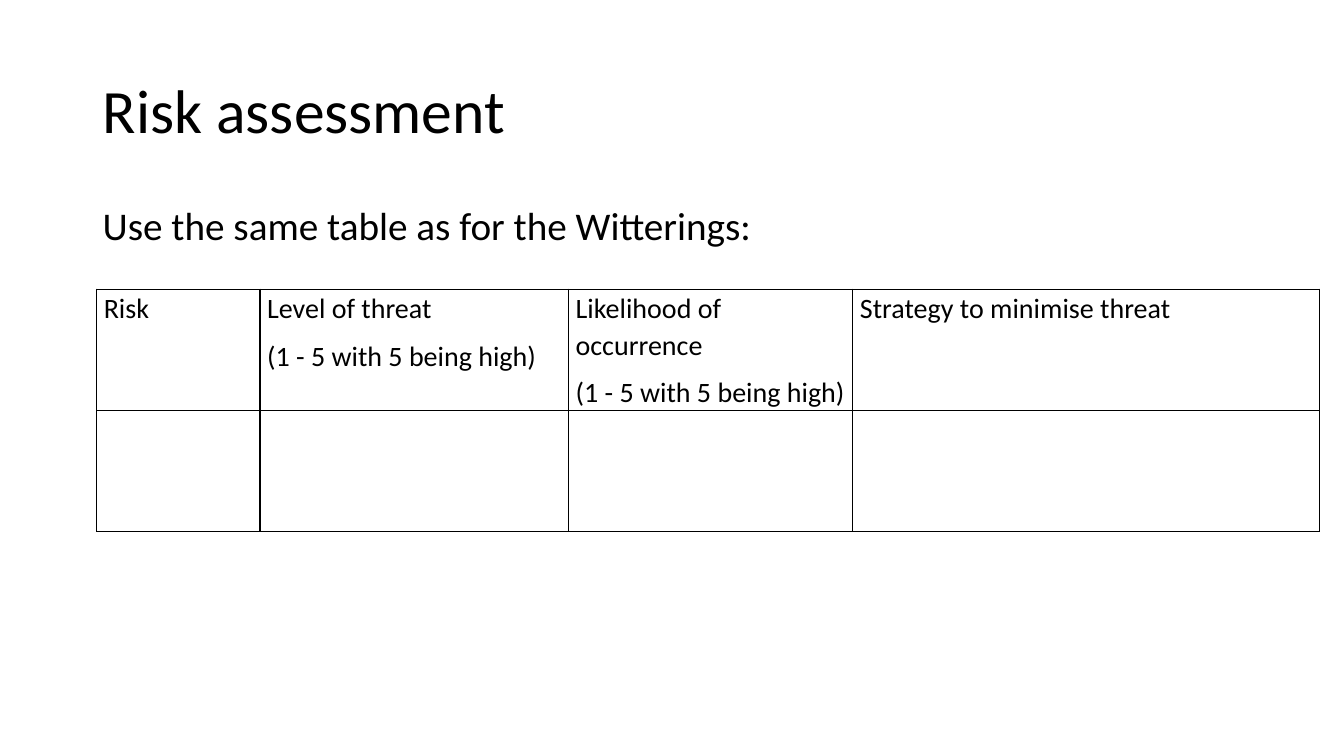
from lxml.etree import SubElement
from pptx import Presentation
from pptx.dml.color import RGBColor
from pptx.enum.text import MSO_ANCHOR, PP_ALIGN
from pptx.oxml.ns import qn
from pptx.util import Inches, Pt

COLORS = {"ink": "000000", "paper": "FFFFFF"}
FONT = "Calibri"
SCALE = "(1 - 5 with 5 being high)"
HEADINGS = [
    ["Risk"],
    ["Level of threat", SCALE],
    ["Likelihood of occurrence", SCALE],
    ["Strategy to minimise threat"],
]
COLUMN_WIDTHS = [1.62, 3.06, 2.82, 4.63]
ROW_HEIGHT = 1.2
ROW_COUNT = 2
LEFT, TEXT_WIDTH = 0.92, 11.5


def write_paragraphs(frame, lines, size, line_spacing, before=0, after=0):
    frame.word_wrap = True
    for index, line in enumerate(lines):
        paragraph = frame.paragraphs[0] if index == 0 else frame.add_paragraph()
        paragraph.alignment = PP_ALIGN.LEFT
        paragraph.line_spacing = line_spacing
        paragraph.space_before = Pt(before)
        paragraph.space_after = Pt(after)
        run = paragraph.add_run()
        run.text = line
        run.font.size = Pt(size)
        run.font.name = FONT
        run.font.color.rgb = RGBColor.from_string(COLORS["ink"])


def place_title(slide, text):
    title = slide.shapes.title
    title.left, title.top = Inches(LEFT), Inches(0.4)
    title.width, title.height = Inches(TEXT_WIDTH), Inches(1.45)
    title.text_frame.vertical_anchor = MSO_ANCHOR.MIDDLE
    write_paragraphs(title.text_frame, [text], 44, 0.9)


def add_instruction(slide, text):
    box = slide.shapes.add_textbox(
        Inches(LEFT), Inches(2), Inches(TEXT_WIDTH), Inches(4.76))
    write_paragraphs(box.text_frame, [text], 28, 0.9, before=10)


def draw_borders(cell):
    properties = cell._tc.get_or_add_tcPr()
    for index, side in enumerate(("a:lnL", "a:lnR", "a:lnT", "a:lnB")):
        line = SubElement(properties, qn(side), w=str(Pt(1)))
        fill = SubElement(line, qn("a:solidFill"))
        SubElement(fill, qn("a:srgbClr"), val=COLORS["ink"])
        properties.insert(index, line)


def format_cell(cell):
    cell.fill.background()
    cell.margin_left = cell.margin_right = Inches(0.07)
    cell.margin_top = cell.margin_bottom = 0
    cell.vertical_anchor = MSO_ANCHOR.TOP
    draw_borders(cell)


def add_risk_table(slide):
    frame = slide.shapes.add_table(
        ROW_COUNT, len(HEADINGS), Inches(0.96), Inches(2.87),
        Inches(sum(COLUMN_WIDTHS)), Inches(ROW_COUNT * ROW_HEIGHT))
    table = frame.table
    table.first_row = table.horz_banding = False
    for column, width in zip(table.columns, COLUMN_WIDTHS):
        column.width = Inches(width)
    for row in table.rows:
        row.height = Inches(ROW_HEIGHT)
    for cell in table.iter_cells():
        format_cell(cell)
    for cell, lines in zip(table.rows[0].cells, HEADINGS):
        write_paragraphs(cell.text_frame, lines, 20, 1.07, after=8)


def main():
    presentation = Presentation()
    presentation.slide_width = Inches(13.33)
    presentation.slide_height = Inches(7.5)
    slide = presentation.slides.add_slide(presentation.slide_layouts[5])
    slide.background.fill.solid()
    slide.background.fill.fore_color.rgb = RGBColor.from_string(COLORS["paper"])
    place_title(slide, "Risk assessment")
    add_instruction(slide, "Use the same table as for the Witterings:")
    add_risk_table(slide)
    presentation.save("out.pptx")


if __name__ == "__main__":
    main()
